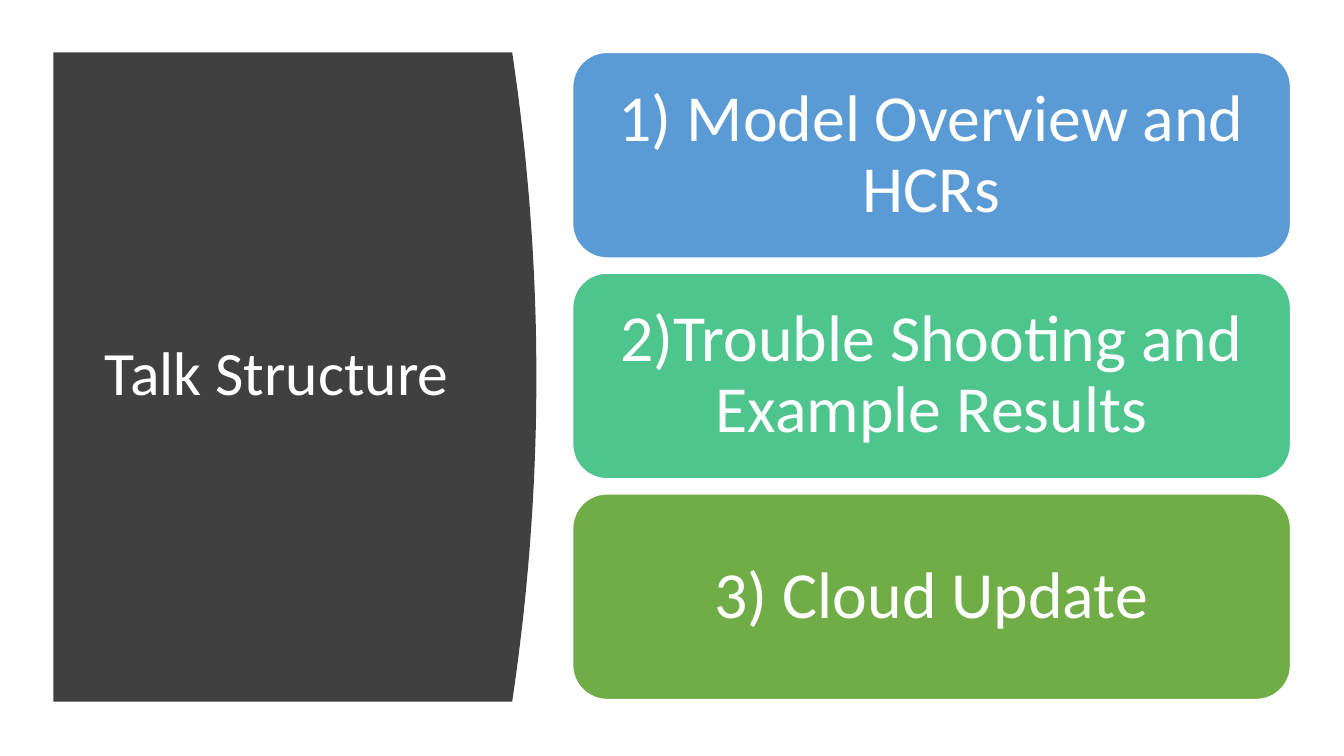
from pptx import Presentation
from pptx.dml.color import RGBColor
from pptx.enum.shapes import MSO_SHAPE
from pptx.enum.text import MSO_ANCHOR, PP_ALIGN
from pptx.util import Inches, Pt

ROUNDED = MSO_SHAPE.ROUNDED_RECTANGLE
MIDDLE = MSO_ANCHOR.MIDDLE
LEFT, CENTER = PP_ALIGN.LEFT, PP_ALIGN.CENTER

WHITE = RGBColor(0xFF, 0xFF, 0xFF)
CHARCOAL = RGBColor(0x40, 0x40, 0x40)
BLUE = RGBColor(0x5B, 0x9B, 0xD5)
TEAL = RGBColor(0x4D, 0xC5, 0x8D)
GREEN = RGBColor(0x70, 0xAD, 0x47)

TITLE_ONLY = 5
TOPICS = [
    ("1) Model Overview and HCRs", BLUE),
    ("2)Trouble Shooting and Example Results", TEAL),
    ("3) Cloud Update", GREEN),
]


def write_text(box, text, *, size, font, color, align, inset):
    """Fill a shape with one paragraph, centred vertically."""
    frame = box.text_frame
    frame.word_wrap = True
    frame.vertical_anchor = MIDDLE
    frame.margin_left = frame.margin_right = Inches(inset)
    frame.margin_top = frame.margin_bottom = Inches(inset)
    para = frame.paragraphs[0]
    para.alignment = align
    para.line_spacing = 0.9
    span = para.add_run()
    span.text = text
    span.font.name = font
    span.font.size = Pt(size)
    span.font.color.rgb = color


class SlideBuilder:
    font = "Calibri"
    text_color = WHITE

    def __init__(self, page):
        self.page = page

    def curved_panel(self, left, top, right, bottom, bulge, color):
        """Draw a panel whose right edge is a shallow parabola."""
        steps = 48
        middle, half = (top + bottom) / 2, (bottom - top) / 2
        heights = [top + (bottom - top) * step / steps for step in range(steps + 1)]
        edge = [(right - bulge * ((y - middle) / half) ** 2, y) for y in heights]
        outline = edge + [(left, bottom)]
        builder = self.page.shapes.build_freeform(Inches(left), Inches(top))
        builder.add_line_segments([(Inches(x), Inches(y)) for x, y in outline])
        panel = builder.convert_to_shape()
        panel.shadow.inherit = False
        panel.fill.solid()
        panel.fill.fore_color.rgb = color
        panel.line.fill.background()
        return panel

    def title(self, text, left, top, width, height, behind):
        """Place the title directly in front of the given shape."""
        box = self.page.shapes.title
        box.left, box.top = Inches(left), Inches(top)
        box.width, box.height = Inches(width), Inches(height)
        write_text(box, text, size=44, font=self.font, color=self.text_color,
                   align=LEFT, inset=0.1)
        behind.element.addnext(box.element)

    def card(self, text, left, top, width, height, color):
        box = self.page.shapes.add_shape(
            ROUNDED, Inches(left), Inches(top), Inches(width), Inches(height))
        box.shadow.inherit = False
        box.fill.solid()
        box.fill.fore_color.rgb = color
        box.line.color.rgb = WHITE
        box.line.width = Pt(1)
        write_text(box, text, size=47, font=self.font, color=self.text_color,
                   align=CENTER, inset=0.2)


def main():
    deck = Presentation()
    deck.slide_width, deck.slide_height = Inches(13.33), Inches(7.5)
    slide = SlideBuilder(deck.slides.add_slide(deck.slide_layouts[TITLE_ONLY]))

    # Title panel
    panel = slide.curved_panel(0.53, 0.52, 5.32, 6.96, 0.24, CHARCOAL)
    slide.title("Talk Structure", 0.94, 1.11, 3.74, 5.24, panel)

    # Topic cards
    height, gap = 2.04, 0.15
    for index, (topic, color) in enumerate(TOPICS):
        slide.card(topic, 5.68, 0.52 + index * (height + gap), 7.12, height, color)

    deck.save("out.pptx")


if __name__ == "__main__":
    main()
